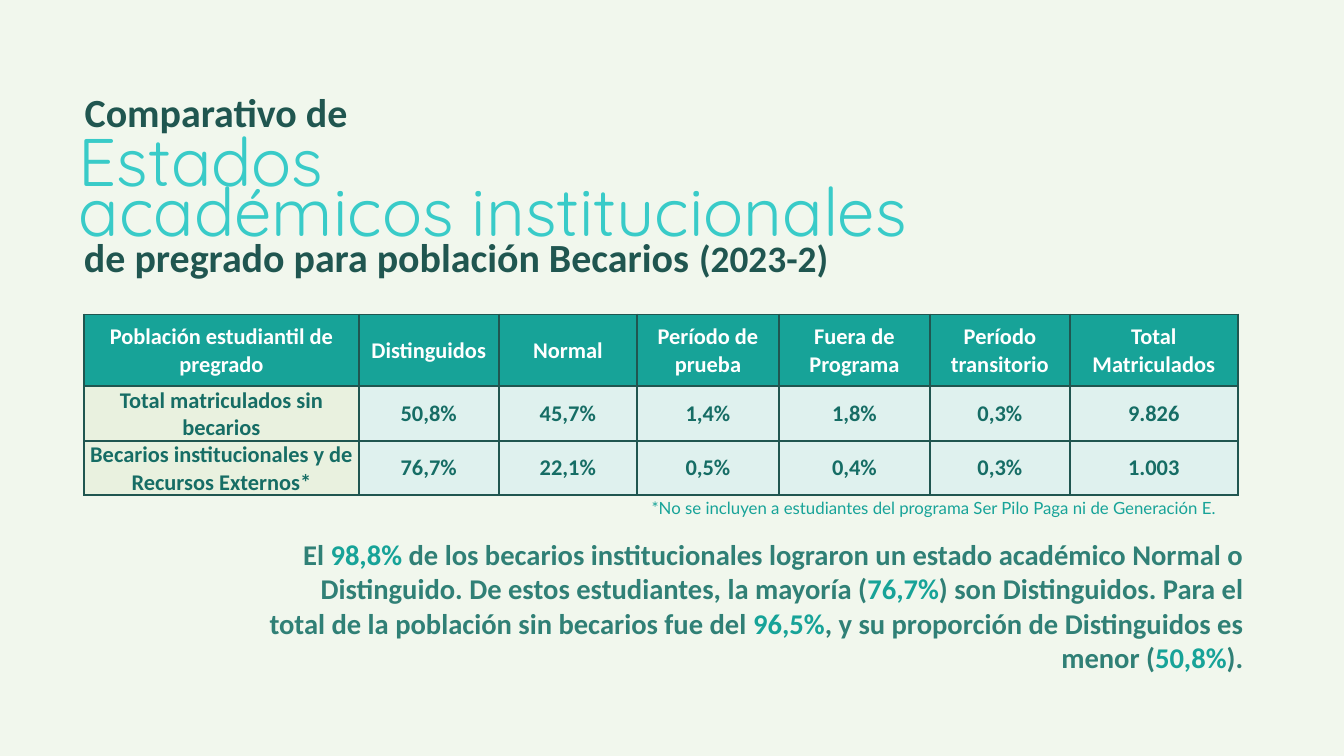
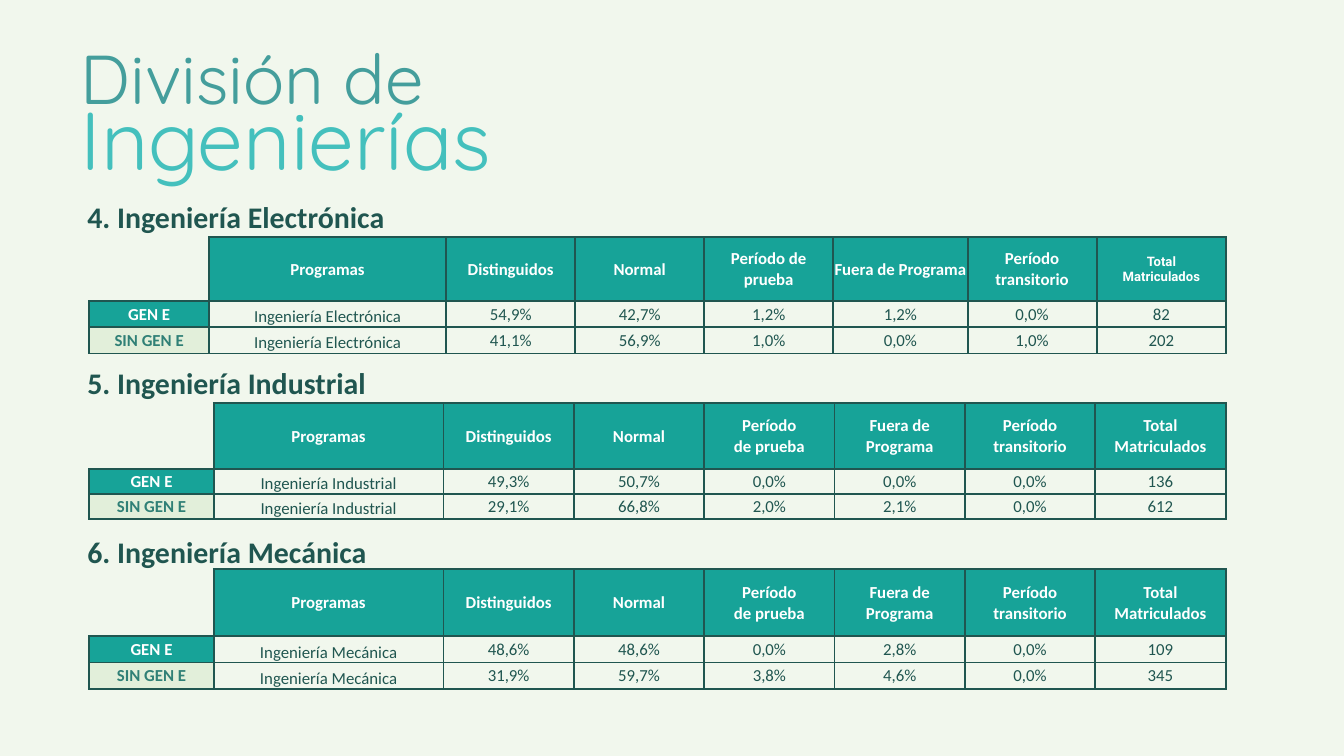
from dataclasses import dataclass, replace
from typing import NamedTuple

from lxml.etree import SubElement
from pptx import Presentation
from pptx.dml.color import RGBColor
from pptx.enum.text import MSO_ANCHOR as Anchor, MSO_AUTO_SIZE as AutoSize, PP_ALIGN as Align
from pptx.oxml.ns import qn
from pptx.util import Inches, Pt

SLIDE_WIDTH, SLIDE_HEIGHT = Inches(20), Inches(11.25)
GRID_COLUMNS, GRID_ROWS = 80, 45
PLAIN_TABLE_STYLE = "{2D5ABB26-0587-4C30-8999-92F81FD0307C}"


@dataclass(frozen=True)
class TextStyle:
    size: float
    color: str
    bold: bool = False
    font: str = "Calibri"


@dataclass(frozen=True)
class Theme:
    background: str = "F1F7ED"
    dark: str = "205650"
    teal: str = "17A398"
    label_fill: str = "E9F1DF"
    value_fill: str = "DFF1EE"
    group_fill: str = "E2EFDA"
    border_width: float = 2.25
    lead: TextStyle = TextStyle(42.8, "205650", True)
    term: TextStyle = TextStyle(40, "205650", True)
    big_title: TextStyle = TextStyle(72, "39CBC8", font="Quicksand")
    division: TextStyle = TextStyle(74, "449E9C", font="Quicksand")
    division_name: TextStyle = TextStyle(88, "44C0BD", font="Quicksand")
    section: TextStyle = TextStyle(32, "205650", True)
    finding: TextStyle = TextStyle(30.6, "308076", True)
    figure: TextStyle = TextStyle(30.6, "17A398", True)
    footnote: TextStyle = TextStyle(18, "17A398", font="Lato")
    large_header: TextStyle = TextStyle(24, "FFFFFF", True)
    large_value: TextStyle = TextStyle(24, "166D65", True)
    header: TextStyle = TextStyle(18, "FFFFFF", True)
    small_header: TextStyle = TextStyle(14, "FFFFFF", True, "Roboto")
    group: TextStyle = TextStyle(18, "308076", True)
    value: TextStyle = TextStyle(18, "205650")


THEME = Theme()


class Area(NamedTuple):
    """A place on the slide, in grid columns and rows."""
    left: float
    top: float
    width: float
    height: float


class Span(NamedTuple):
    text: str
    style: TextStyle


class Line(NamedTuple):
    """A paragraph, with its exact line spacing in points if it has one."""
    spans: list[Span]
    spacing: float | None = None


@dataclass(frozen=True)
class Cell:
    """Each entry of lines is a paragraph; a newline inside it is a line break."""
    lines: tuple[str, ...]
    style: TextStyle
    fill: str
    anchor: Anchor = Anchor.MIDDLE


@dataclass(frozen=True)
class Section:
    title: str
    program: str
    title_area: Area
    table_top: float
    columns: tuple[float, ...]
    header_row: float
    body_row: float
    headers: tuple[Cell, ...]
    gen_e: tuple[str, ...]
    without_gen_e: tuple[str, ...]


def across(columns: float) -> int:
    return round(SLIDE_WIDTH * columns / GRID_COLUMNS)


def down(rows: float) -> int:
    return round(SLIDE_HEIGHT * rows / GRID_ROWS)


def place(area: Area) -> tuple[int, int, int, int]:
    return across(area.left), down(area.top), across(area.width), down(area.height)


def add_span(para, span: Span) -> None:
    for index, part in enumerate(span.text.split("\n")):
        if index:
            para.add_line_break()
        run = para.add_run()
        run.text = part
        run.font.name = span.style.font
        run.font.size = Pt(span.style.size)
        run.font.bold = span.style.bold
        run.font.color.rgb = RGBColor.from_string(span.style.color)


def fill_frame(frame, lines: list[Line], align: Align) -> None:
    for index, line in enumerate(lines):
        para = frame.add_paragraph() if index else frame.paragraphs[0]
        para.alignment = align
        if line.spacing:
            para.line_spacing = Pt(line.spacing)
        for span in line.spans:
            add_span(para, span)


def add_text(page, area: Area, lines: list[Line], align: Align = Align.LEFT) -> None:
    frame = page.shapes.add_textbox(*place(area)).text_frame
    frame.word_wrap = True
    frame.auto_size = AutoSize.SHAPE_TO_FIT_TEXT
    frame.margin_left = frame.margin_right = frame.margin_top = frame.margin_bottom = 0
    fill_frame(frame, lines, align)


def add_borders(box, sides: str) -> None:
    """Draw the given sides (any of L, R, T, B) ahead of the cell's fill."""
    properties = box._tc.get_or_add_tcPr()
    for index, side in enumerate(sides):
        line = SubElement(properties, qn(f"a:ln{side}"), w=str(Pt(THEME.border_width)))
        paint = SubElement(line, qn("a:solidFill"))
        SubElement(paint, qn("a:srgbClr"), val=THEME.dark)
        properties.insert(index, line)


def draw_cell(box, cell: Cell | None, sides: str) -> None:
    box.margin_left = box.margin_right = box.margin_top = Inches(0.01)
    box.margin_bottom = 0
    if cell:
        box.vertical_anchor = cell.anchor
        box.fill.solid()
        box.fill.fore_color.rgb = RGBColor.from_string(cell.fill)
        lines = [Line([Span(text, cell.style)]) for text in cell.lines]
        fill_frame(box.text_frame, lines, Align.CENTER)
    else:
        box.fill.background()
    add_borders(box, sides)


def add_grid(page, left: float, top: float, columns: tuple[float, ...],
             rows: tuple[float, ...], cells: list[list[Cell | None]],
             tall_header: bool = False) -> None:
    """Add a table; a tall header spans two rows beside an open corner."""
    area = Area(left, top, sum(columns), sum(rows))
    frame = page.shapes.add_table(len(rows), len(columns), *place(area))
    table = frame.table
    table.first_row = table.horz_banding = False
    table._tbl.tblPr.find(qn("a:tableStyleId")).text = PLAIN_TABLE_STYLE
    for column, width in zip(table.columns, columns):
        column.width = across(width)
    for row, height in zip(table.rows, rows):
        row.height = down(height)
    for row_index, row_cells in enumerate(cells):
        for column_index, cell in enumerate(row_cells):
            sides = "LRTB"
            if tall_header and column_index == 0 and row_index < 2:
                sides = "RB" if row_index else "R"
            draw_cell(table.cell(row_index, column_index), cell, sides)
    if tall_header:
        for column_index in range(1, len(columns)):
            table.cell(0, column_index).merge(table.cell(1, column_index))


def add_page(deck):
    page = deck.slides.add_slide(deck.slide_layouts[6])
    page.background.fill.solid()
    page.background.fill.fore_color.rgb = RGBColor.from_string(THEME.background)
    return page


def header_cells(style: TextStyle, *headers: str | tuple[str, ...]) -> tuple[Cell, ...]:
    return tuple(Cell((text,) if isinstance(text, str) else text, style, THEME.teal)
                 for text in headers)


def value_cells(values: tuple[str, ...], style: TextStyle, fill: str) -> list[Cell]:
    return [Cell((value,), style, fill) for value in values]


STATUS_HEADERS = ("Distinguidos", "Normal", "Período de prueba", "Fuera de Programa",
                  "Período transitorio", "Total\nMatriculados")

SCHOLARSHIP_ROWS = {
    "Total matriculados sin becarios":
        ("50,8%", "45,7%", "1,4%", "1,8%", "0,3%", "9.826"),
    "Becarios institucionales y de Recursos Externos*":
        ("76,7%", "22,1%", "0,5%", "0,4%", "0,3%", "1.003"),
}

FINDING = (
    ("El ", "98,8%"),
    (" de los becarios institucionales lograron un estado académico Normal o "
     "Distinguido. De estos estudiantes, la mayoría (", "76,7%"),
    (") son Distinguidos. Para el total de la población sin becarios fue del ", "96,5%"),
    (", y su proporción de Distinguidos es menor (", "50,8%"),
)

SPLIT_HEADERS = header_cells(THEME.header, "Programas", *STATUS_HEADERS[:2],
                             ("Período", "de prueba"), *STATUS_HEADERS[3:])
ONE_LINE_HEADERS = header_cells(THEME.header, "Programas", *STATUS_HEADERS)
COMPACT_HEADERS = (*ONE_LINE_HEADERS[:-1],
                   replace(ONE_LINE_HEADERS[-1], style=THEME.small_header))
EVEN_COLUMNS = (7.4, 13.68, *(7.76,) * 6)

SECTIONS = (
    Section("4. Ingeniería Electrónica", "Ingeniería Electrónica",
            Area(5.2, 12.16, 26.8, 1.84), 14.12,
            (7.12, 14.12, *(7.68,) * 3, 8, 7.68, 7.72), 1.36, 1.56, COMPACT_HEADERS,
            ("54,9%", "42,7%", "1,2%", "1,2%", "0,0%", "82"),
            ("41,1%", "56,9%", "1,0%", "0,0%", "1,0%", "202")),
    Section("5. Ingeniería Industrial", "Ingeniería Industrial",
            Area(5.2, 22.04, 24.8, 1.84), 24, EVEN_COLUMNS, 1.48, 1.48, SPLIT_HEADERS,
            ("49,3%", "50,7%", "0,0%", "0,0%", "0,0%", "136"),
            ("29,1%", "66,8%", "2,0%", "2,1%", "0,0%", "612")),
    Section("6. Ingeniería Mecánica", "Ingeniería Mecánica",
            Area(5.2, 32.08, 19.48, 1.84), 33.88, EVEN_COLUMNS, 1.56, 1.56, SPLIT_HEADERS,
            ("48,6%", "48,6%", "0,0%", "2,8%", "0,0%", "109"),
            ("31,9%", "59,7%", "3,8%", "4,6%", "0,0%", "345")),
)


def build_scholarship_page(deck) -> None:
    page = add_page(deck)
    add_text(page, Area(5.04, 5.2, 73.84, 2.84),
             [Line([Span("Comparativo de", THEME.lead)], 51.7)])
    add_text(page, Area(4.68, 7.16, 73.84, 7.92),
             [Line([Span("Estados", THEME.big_title)], 84.9),
              Line([Span("académicos institucionales", THEME.big_title)], 54)])
    add_text(page, Area(5, 13.84, 73.84, 2.8),
             [Line([Span("de pregrado para población Becarios ", THEME.lead),
                    Span("(2023-2)", THEME.term)], 51.7)])

    cells = [list(header_cells(THEME.large_header, "Población estudiantil de pregrado",
                               *STATUS_HEADERS))]
    for label, values in SCHOLARSHIP_ROWS.items():
        cells.append([Cell((label,), THEME.large_value, THEME.label_fill),
                      *value_cells(values, THEME.large_value, THEME.value_fill)])
    add_grid(page, 5, 18.72, (16.36, 8.32, 8.24, 8.44, 9, 8.32, 10),
             (4.28, 2.32, 2.32), cells)

    add_text(page, Area(37.6, 29.64, 35.96, 1.2),
             [Line([Span("*No se incluyen a estudiantes del programa Ser Pilo Paga "
                         "ni de Generación E.", THEME.footnote)], 21.8)], Align.CENTER)
    spans = [span for words, figure in FINDING
             for span in (Span(words, THEME.finding), Span(figure, THEME.figure))]
    add_text(page, Area(15.64, 31.92, 58.36, 8.24),
             [Line([*spans, Span(").", THEME.finding)], 37)], Align.RIGHT)


def add_section(page, section: Section) -> None:
    add_text(page, section.title_area, [Line([Span(section.title, THEME.section)], 32.7)])
    program = Cell((section.program,), THEME.value, THEME.background, Anchor.BOTTOM)
    groups = (
        (Cell(("GEN E",), THEME.header, THEME.teal), section.gen_e),
        (Cell(("SIN GEN E",), THEME.group, THEME.group_fill), section.without_gen_e),
    )
    cells = [[None, *section.headers], [None] * len(section.columns)]
    cells += [[group, program, *value_cells(values, THEME.value, THEME.background)]
              for group, values in groups]
    rows = (section.header_row,) * 2 + (section.body_row,) * 2
    add_grid(page, 5.32, section.table_top, section.columns, rows, cells, tall_header=True)


def build_engineering_page(deck) -> None:
    page = add_page(deck)
    add_text(page, Area(4.8, 2.12, 23.84, 5.04),
             [Line([Span("División de", THEME.division)])])
    add_text(page, Area(4.8, 5.24, 61.84, 11.84),
             [Line([Span("Ingenierías", THEME.division_name)])])
    for section in SECTIONS:
        add_section(page, section)


def main() -> None:
    deck = Presentation()
    deck.slide_width, deck.slide_height = SLIDE_WIDTH, SLIDE_HEIGHT
    build_scholarship_page(deck)
    build_engineering_page(deck)
    deck.save("out.pptx")


if __name__ == "__main__":
    main()
